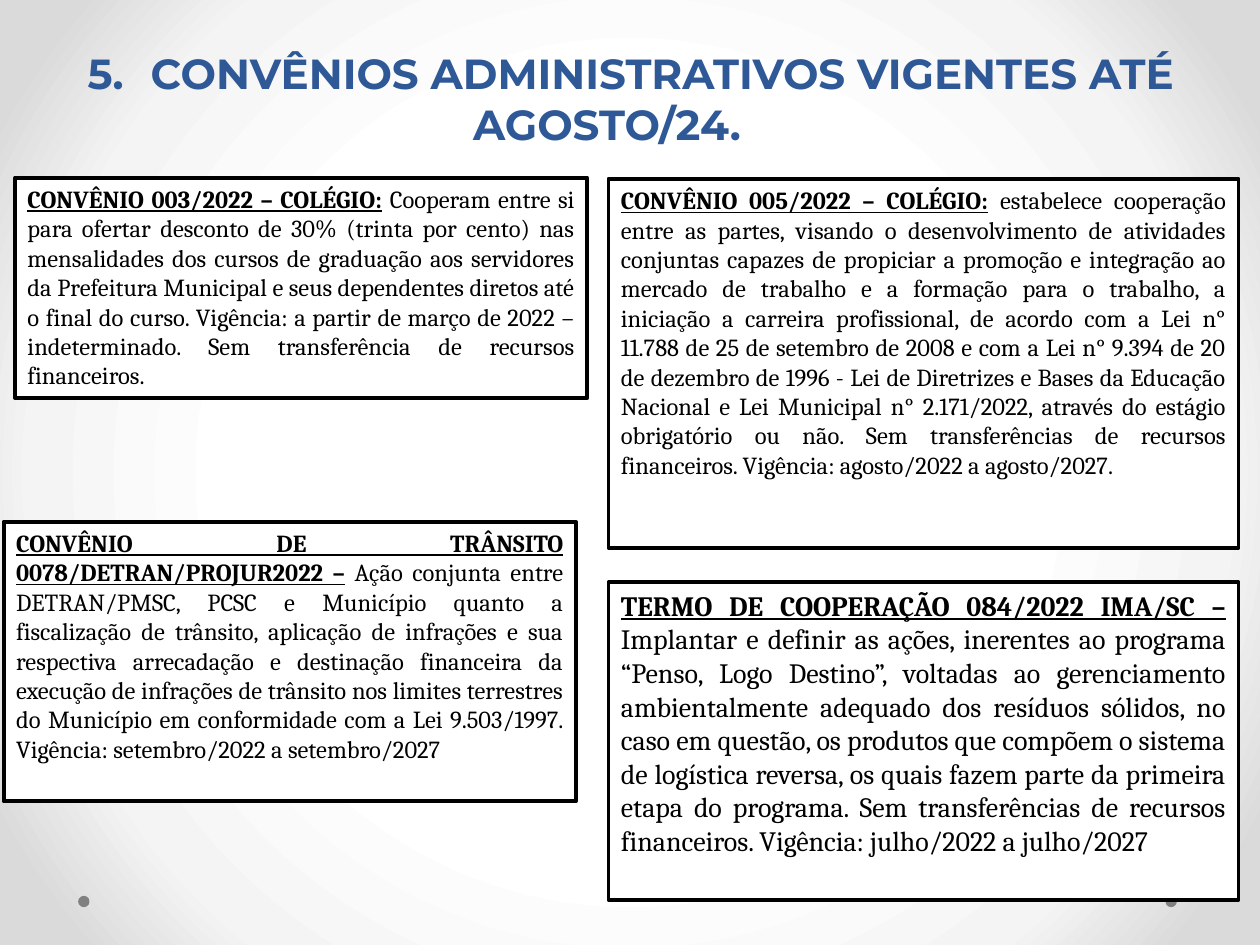
from lxml import etree
from pptx import Presentation
from pptx.dml.color import RGBColor
from pptx.enum.shapes import MSO_SHAPE
from pptx.enum.text import MSO_ANCHOR, PP_ALIGN
from pptx.oxml import parse_xml
from pptx.oxml.ns import qn
from pptx.util import Inches, Pt

RECTANGLE, OVAL = MSO_SHAPE.RECTANGLE, MSO_SHAPE.OVAL
TOP, BOTTOM = MSO_ANCHOR.TOP, MSO_ANCHOR.BOTTOM
CENTER, JUSTIFY = PP_ALIGN.CENTER, PP_ALIGN.JUSTIFY
DRAWING_NS = "http://schemas.openxmlformats.org/drawingml/2006/main"

TITLE = "5.\tCONVÊNIOS ADMINISTRATIVOS VIGENTES ATÉ AGOSTO/24.\t"
GRADIENT = [(50, "FFFFFF"), (76, "F4F4F4"), (92, "DADADA")]
DOT_LEFTS = [0.62, 9.25]
LEFT_WIDTH, RIGHT_WIDTH, RIGHT_LEFT = 4.54, 5, 4.83

AGREEMENTS = [
    ((0.03, 4.14, LEFT_WIDTH, 2.22), 14,
     "CONVÊNIO DE TRÂNSITO 0078/DETRAN/PROJUR2022 –",
     " Ação conjunta entre DETRAN/PMSC, PCSC e Município quanto a fiscalização de trânsito, "
     "aplicação de infrações e sua respectiva arrecadação e destinação financeira da execução "
     "de infrações de trânsito nos limites terrestres do Município em conformidade com a Lei "
     "9.503/1997. Vigência: setembro/2022 a setembro/2027"),
    ((0.12, 1.41, LEFT_WIDTH, 1.75), 14,
     "CONVÊNIO 003/2022 – COLÉGIO:",
     " Cooperam entre si para ofertar desconto de 30% (trinta por cento) nas mensalidades dos "
     "cursos de graduação aos servidores da Prefeitura Municipal e seus dependentes diretos até "
     "o final do curso. Vigência: a partir de março de 2022 – indeterminado. Sem transferência "
     "de recursos financeiros."),
    ((RIGHT_LEFT, 1.42, RIGHT_WIDTH, 2.93), 14,
     "CONVÊNIO 005/2022 – COLÉGIO:",
     " estabelece cooperação entre as partes, visando o desenvolvimento de atividades conjuntas "
     "capazes de propiciar a promoção e integração ao mercado de trabalho e a formação para o "
     "trabalho, a iniciação a carreira profissional, de acordo com a Lei n° 11.788 de 25 de "
     "setembro de 2008 e com a Lei n° 9.394 de 20 de dezembro de 1996 - Lei de Diretrizes e "
     "Bases da Educação Nacional e Lei Municipal n° 2.171/2022, através do estágio obrigatório "
     "ou não. Sem transferências de recursos financeiros. Vigência: agosto/2022 a agosto/2027."),
    ((RIGHT_LEFT, 4.62, RIGHT_WIDTH, 2.52), 16,
     "TERMO DE COOPERAÇÃO 084/2022 IMA/SC – ",
     "Implantar e definir as ações, inerentes ao programa “Penso, Logo Destino”, voltadas ao "
     "gerenciamento ambientalmente adequado dos resíduos sólidos, no caso em questão, os "
     "produtos que compõem o sistema de logística reversa, os quais fazem parte da primeira "
     "etapa do programa. Sem transferências de recursos financeiros. Vigência: julho/2022 a "
     "julho/2027"),
]


def color(value):
    return RGBColor.from_string(value)


def set_background(slide):
    slide.background.fill.solid()
    solid = slide.element.find(".//" + qn("a:solidFill"))
    gradient = parse_xml(
        f'<a:gradFill xmlns:a="{DRAWING_NS}" rotWithShape="1"><a:gsLst/>'
        '<a:path path="circle"><a:fillToRect l="50000" t="50000" r="50000" b="50000"/></a:path>'
        "</a:gradFill>")
    for position, value in GRADIENT:
        stop = etree.SubElement(gradient[0], qn("a:gs"), pos=str(position * 1000))
        etree.SubElement(stop, qn("a:srgbClr"), val=value)
    solid.getparent().replace(solid, gradient)


def add_shape(slide, kind, box, fill):
    shape = slide.shapes.add_shape(kind, *map(Inches, box))
    shape.shadow.inherit = False
    shape.fill.solid()
    shape.fill.fore_color.rgb = color(fill)
    shape.line.fill.background()
    return shape


def write(shape, runs, size, font_name, font_color, alignment, anchor):
    text_frame = shape.text_frame
    text_frame.word_wrap = True
    text_frame.vertical_anchor = anchor
    paragraph = text_frame.paragraphs[0]
    paragraph.alignment = alignment
    for text, bold, underline in runs:
        run = paragraph.add_run()
        run.text = text
        font = run.font
        font.name, font.size = font_name, Pt(size)
        font.bold, font.underline = bold, underline
        font.color.rgb = color(font_color)


def main():
    presentation = Presentation()
    presentation.slide_width, presentation.slide_height = Inches(10), Inches(7.5)
    slide = presentation.slides.add_slide(presentation.slide_layouts[6])
    set_background(slide)

    for left in DOT_LEFTS:
        add_shape(slide, OVAL, (left, 7.11, 0.09, 0.09), "808080")

    title = slide.shapes.add_textbox(*map(Inches, (0.4, 0.29, 9.21, 0.94)))
    write(title, [(TITLE, True, False)], 24, "Montserrat", "2F5897", CENTER, BOTTOM)

    for box, size, heading, body in AGREEMENTS:
        panel = add_shape(slide, RECTANGLE, box, "FFFFFF")
        panel.line.color.rgb = color("000000")
        panel.line.width = Pt(2.25)
        runs = [(heading, True, True), (body, False, False)]
        write(panel, runs, size, "Cambria", "000000", JUSTIFY, TOP)

    presentation.save("out.pptx")


if __name__ == "__main__":
    main()
